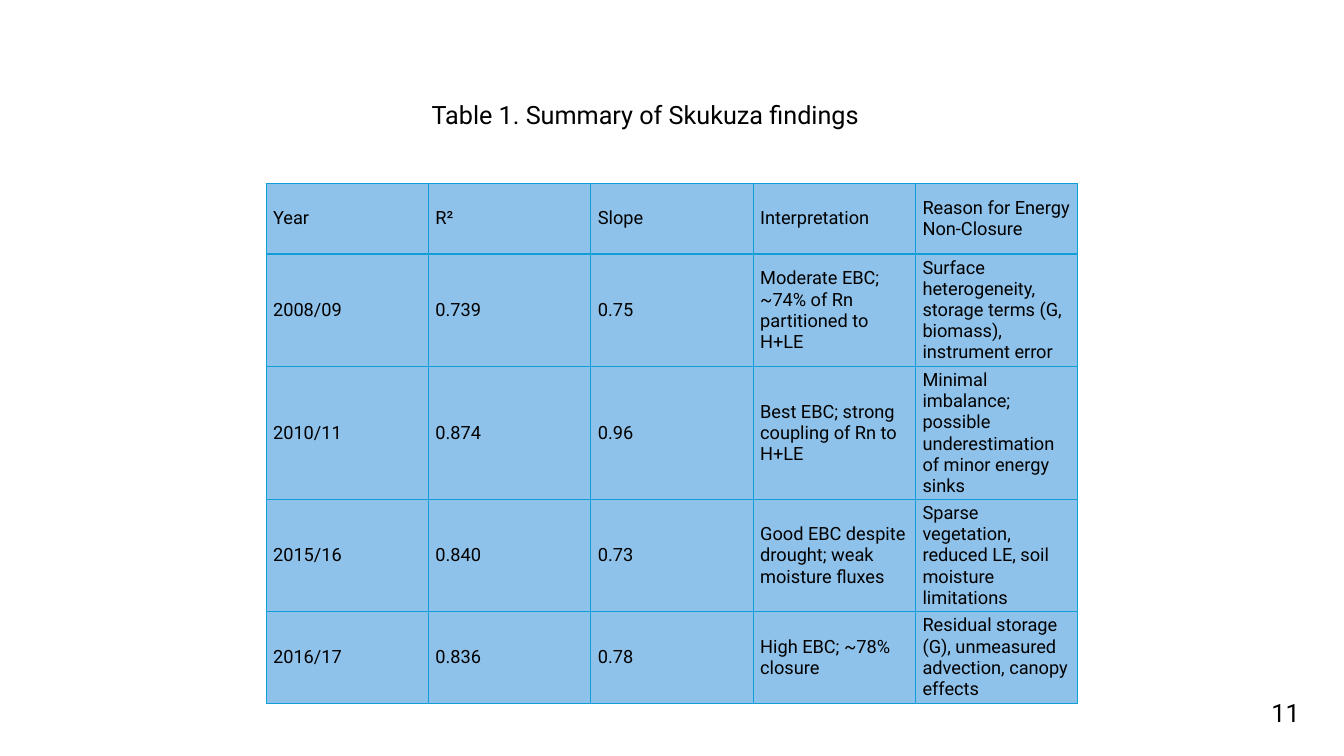
from dataclasses import dataclass

from lxml.etree import SubElement as Sub
from pptx import Presentation as Deck
from pptx.dml.color import RGBColor as Rgb
from pptx.enum.text import MSO_ANCHOR as Anchor
from pptx.oxml.ns import qn
from pptx.slide import Slide
from pptx.table import _Cell as Cell
from pptx.text.text import TextFrame as Frame
from pptx.util import Inches, Length, Pt

WIDE, TALL = Inches(13.33), Inches(7.5)
FONT = "Roboto"
BLACK = Rgb(0x00, 0x00, 0x00)
SKY = Rgb(0x8F, 0xC2, 0xEA)
BLUE = Rgb(0x0F, 0x9E, 0xD5)


@dataclass(frozen=True)
class Label:
    text: str
    left: float
    top: float
    width: float
    height: float
    indent: float = 0.75


@dataclass(frozen=True)
class Row:
    height: float
    texts: tuple[str, ...]


LABELS = (
    Label("Table 1. Summary of Skukuza findings", 22.58, 12.53, 49.44, 5.47, 9.53),
    Label("11", 93.85, 91.6, 3.75, 5.33),
)

ROWS = (
    Row(9.33, ("Year", "R²", "Slope", "Interpretation",
               "Reason for Energy Non-Closure")),
    Row(14.93, ("2008/09", "0.739", "0.75",
                "Moderate EBC; ~74% of Rn partitioned to H+LE",
                "Surface heterogeneity, storage terms (G, biomass), instrument error")),
    Row(14.93, ("2010/11", "0.874", "0.96",
                "Best EBC; strong coupling of Rn to H+LE",
                "Minimal imbalance; possible underestimation of minor energy sinks")),
    Row(12.13, ("2015/16", "0.840", "0.73",
                "Good EBC despite drought; weak moisture fluxes",
                "Sparse vegetation, reduced LE, soil moisture limitations")),
    Row(12.13, ("2016/17", "0.836", "0.78",
                "High EBC; ~78% closure",
                "Residual storage (G), unmeasured advection, canopy effects")),
)


def across(share: float) -> Length:
    return Length(round(WIDE * share / 100))


def down(share: float) -> Length:
    return Length(round(TALL * share / 100))


def write(frame: Frame, text: str, size: int) -> None:
    run = frame.paragraphs[0].add_run()
    run.text = text
    run.font.name = FONT
    run.font.size = Pt(size)
    run.font.color.rgb = BLACK


def draw_label(slide: Slide, label: Label) -> None:
    box = slide.shapes.add_textbox(across(label.left), down(label.top),
                                   across(label.width), down(label.height))
    frame = box.text_frame
    frame.word_wrap = True
    frame.margin_left = across(label.indent)
    write(frame, label.text, 18)


def edge(cell: Cell) -> None:
    props = cell._tc.get_or_add_tcPr()
    for spot, side in enumerate(("lnL", "lnR", "lnT", "lnB")):
        line = Sub(props, qn(f"a:{side}"), w=str(Pt(1)))
        fill = Sub(line, qn("a:solidFill"))
        Sub(fill, qn("a:srgbClr"), val=str(BLUE))
        props.insert(spot, line)


def draw_cell(cell: Cell, text: str) -> None:
    cell.fill.solid()
    cell.fill.fore_color.rgb = SKY
    cell.vertical_anchor = Anchor.MIDDLE
    cell.margin_left = cell.margin_right = Inches(0.07)
    cell.margin_top = cell.margin_bottom = Inches(0.03)
    write(cell.text_frame, text, 13)
    edge(cell)


def draw_table(slide: Slide, rows: tuple[Row, ...]) -> None:
    height = down(68)
    shape = slide.shapes.add_table(len(rows), len(rows[0].texts), across(19.8),
                                   down(24.27), across(60.4), height)
    table = shape.table
    table.first_row = table.horz_banding = False
    for line, row in zip(table.rows, rows):
        line.height = down(row.height)
        for cell, text in zip(line.cells, row.texts):
            draw_cell(cell, text)
    shape.height = height


def main() -> None:
    deck = Deck()
    deck.slide_width, deck.slide_height = WIDE, TALL
    slide = deck.slides.add_slide(deck.slide_layouts[6])
    draw_table(slide, ROWS)
    for label in LABELS:
        draw_label(slide, label)
    deck.save("out.pptx")


if __name__ == "__main__":
    main()
